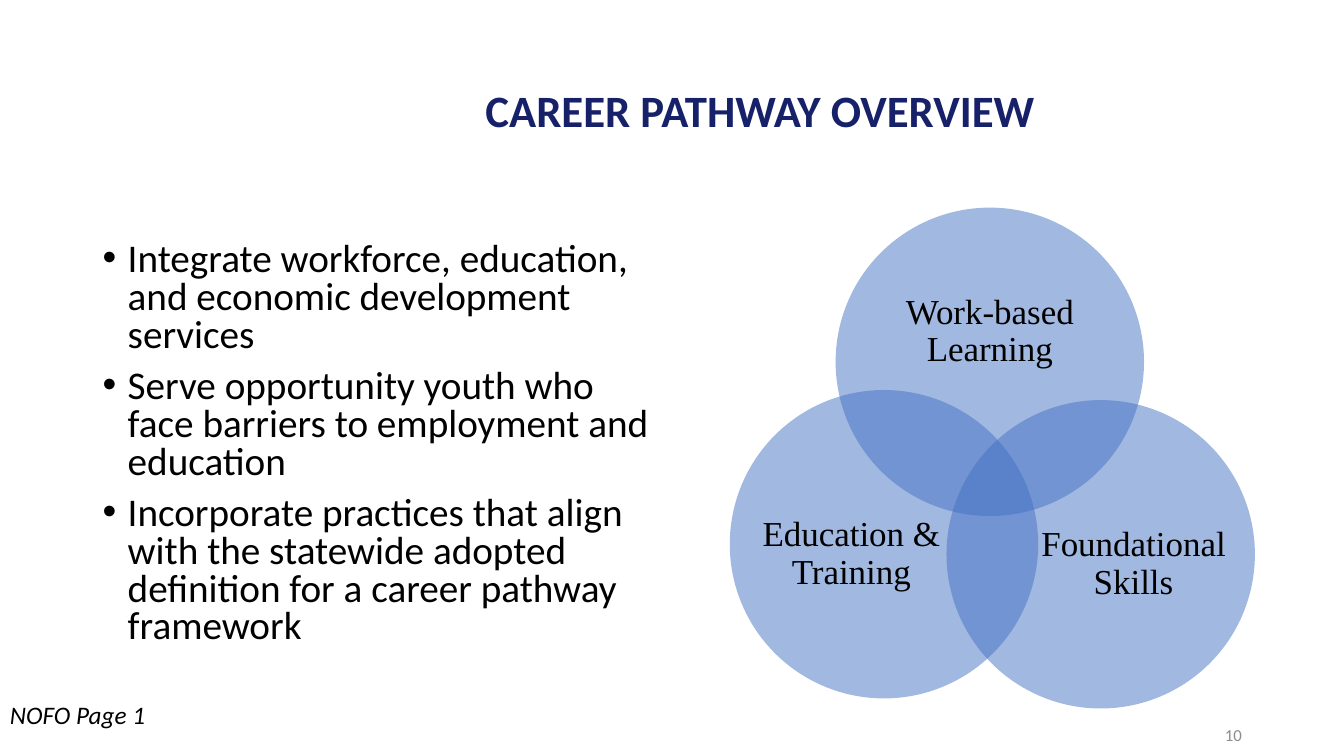
import dataclasses

import pptx
import pptx.dml.color
import pptx.enum.shapes
import pptx.enum.text
import pptx.oxml.ns
import pptx.util
from lxml import etree

Pt = pptx.util.Pt
RGB = pptx.dml.color.RGBColor.from_string
ALIGN = pptx.enum.text.PP_ALIGN
ANCHOR = pptx.enum.text.MSO_ANCHOR
qn = pptx.oxml.ns.qn


@dataclasses.dataclass(frozen=True)
class Theme:
    sans: str = "Calibri"
    serif: str = "Times New Roman"
    navy: str = "172169"
    black: str = "000000"
    gray: str = "8C8C8C"
    blue: str = "4472C4"
    title: int = 32
    body: int = 28
    label: int = 25
    note: int = 18
    number: int = 12


THEME = Theme()
CIRCLE = 220.3
BULLETS = [
    "Integrate workforce, education, and economic development services",
    "Serve opportunity youth who face barriers to employment and education",
    "Incorporate practices that align with the statewide adopted definition "
    "for a career pathway framework",
]
VENN = [
    ((596.9, 148.3), (626.4, 187.2, 161.3, 99.4), "Work-based Learning"),
    ((676.1, 285.8), (743.8, 342.7, 131.8, 121), "Foundational Skills"),
    ((521.3, 278.6), (542.2, 335.5, 131.8, 121), "Education & Training"),
]


def add_text(slide, box, texts, size, color=THEME.black, font=THEME.sans,
             align=ALIGN.LEFT, anchor=ANCHOR.TOP, spacing=1.0, inset=None,
             bold=False, italic=False, bullets=False):
    sp = slide.shapes.add_textbox(*map(Pt, box))
    tf = sp.text_frame
    tf.word_wrap = True
    tf.vertical_anchor = anchor
    if inset is not None:
        tf.margin_left = tf.margin_right = Pt(inset)
        tf.margin_top = tf.margin_bottom = Pt(inset)
    for i, text in enumerate(texts):
        p = tf.paragraphs[0] if i == 0 else tf.add_paragraph()
        if bullets:
            add_bullet(p)
        p.alignment = align
        p.line_spacing = spacing
        if i:
            p.space_before = Pt(10)
        r = p.add_run()
        r.text = text
        r.font.name = font
        r.font.size = Pt(size)
        r.font.bold = bold
        r.font.italic = italic
        r.font.color.rgb = RGB(color)


def add_bullet(p):
    pPr = p._p.get_or_add_pPr()
    pPr.set("marL", str(Pt(18)))
    pPr.set("indent", str(-Pt(18)))
    etree.SubElement(pPr, qn("a:buFont")).set("typeface", "Arial")
    etree.SubElement(pPr, qn("a:buChar")).set("char", "•")


def add_circle(slide, left, top):
    sp = slide.shapes.add_shape(pptx.enum.shapes.MSO_SHAPE.OVAL,
                                Pt(left), Pt(top), Pt(CIRCLE), Pt(CIRCLE))
    sp.shadow.inherit = False
    sp.fill.solid()
    sp.fill.fore_color.rgb = RGB(THEME.blue)
    sp.line.fill.background()
    color = sp._element.spPr.find(qn("a:solidFill")).find(qn("a:srgbClr"))
    etree.SubElement(color, qn("a:alpha")).set("val", "50000")


def add_venn(slide):
    for corner, label_box, label in VENN:
        add_circle(slide, *corner)
        add_text(slide, label_box, [label], THEME.label, font=THEME.serif,
                 align=ALIGN.CENTER, anchor=ANCHOR.MIDDLE, spacing=0.9, inset=0)


def main():
    prs = pptx.Presentation()
    prs.slide_width, prs.slide_height = Pt(960), Pt(540)
    slide = prs.slides.add_slide(prs.slide_layouts[6])
    add_text(slide, (243, 53, 600, 55.4), ["CAREER PATHWAY OVERVIEW"],
             THEME.title, THEME.navy, align=ALIGN.CENTER,
             anchor=ANCHOR.MIDDLE, spacing=0.9, bold=True)
    add_text(slide, (66.2, 169.9, 408.2, 316.8), BULLETS, THEME.body,
             spacing=0.8, bullets=True)
    add_text(slide, (678.2, 510.5, 216, 28.8), ["10"], THEME.number,
             THEME.gray, align=ALIGN.RIGHT, anchor=ANCHOR.MIDDLE)
    add_venn(slide)
    add_text(slide, (0, 496.1, 183.6, 28.8), ["NOFO Page 1"], THEME.note,
             italic=True)
    prs.save("out.pptx")


if __name__ == "__main__":
    main()
